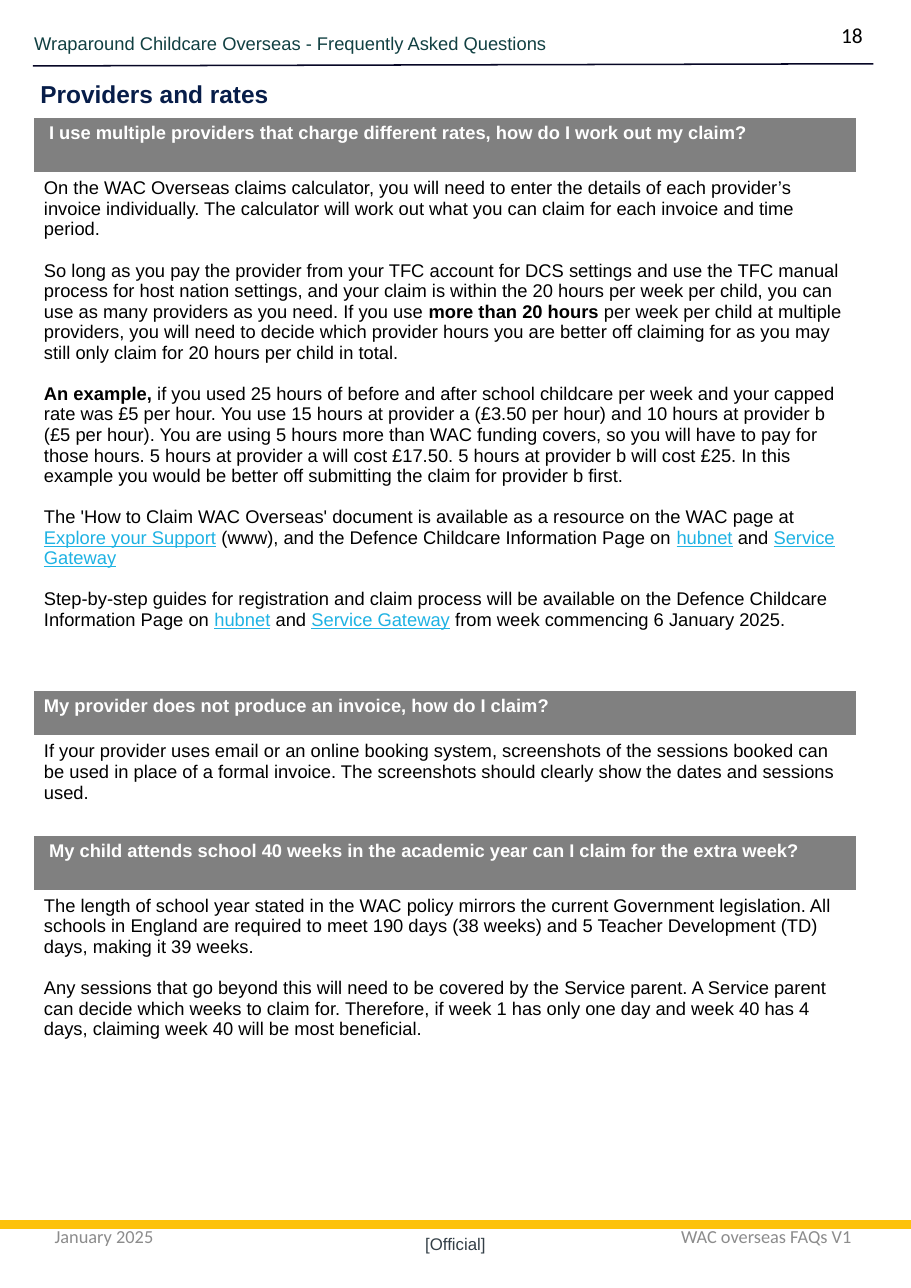
import pptx
import pptx.dml.color
import pptx.enum.shapes
import pptx.enum.text
import pptx.oxml
import pptx.oxml.ns
import pptx.util

Cm = pptx.util.Cm
Pt = pptx.util.Pt
Color = pptx.dml.color.RGBColor
Align = pptx.enum.text.PP_ALIGN
Anchor = pptx.enum.text.MSO_ANCHOR

BLACK = Color(0x00, 0x00, 0x00)
WHITE = Color(0xFF, 0xFF, 0xFF)
BAND_GREY = Color(0x80, 0x80, 0x80)
FOOTER_GREY = Color(0x8C, 0x8C, 0x8C)
MARKING_GREY = Color(0x33, 0x3F, 0x47)
HEADER_GREEN = Color(0x11, 0x40, 0x42)
RULE_NAVY = Color(0x06, 0x06, 0x25)
TITLE_NAVY = Color(0x07, 0x1D, 0x49)
RULE_YELLOW = Color(0xFD, 0xC2, 0x0B)
LINK_BLUE = Color(0x1E, 0xB2, 0xE3)

PAGE_WIDTH = 21.01
PLAIN, BOLD, LINK = "plain", "bold", "link"
INTRANET = (LINK, "hubnet")
GATEWAY = (LINK, "Service Gateway")
AND = (PLAIN, " and ")

QUESTIONS = [
    ("\u00a0I use multiple providers that charge different rates, how do I work out my claim?", 1.27, 11.94, [
        [(PLAIN, "On the WAC Overseas claims calculator, you will need to enter the details of each provider’s "
                 "invoice individually. The calculator will work out what you can claim for each invoice and "
                 "time period.")],
        [(PLAIN, "So long as you pay the provider from your TFC account for DCS settings and use the TFC manual "
                 "process for host nation settings, and your claim is within the 20 hours per week per child, "
                 "you can use as many providers as you need. If you use "),
         (BOLD, "more than 20 hours"),
         (PLAIN, " per week per child at multiple providers, you will need to decide which provider hours you "
                 "are better off claiming for as you may still only claim for 20 hours per child in total.")],
        [(BOLD, "An example, "),
         (PLAIN, "if you used 25 hours of before and after school childcare per week and your capped rate was "
                 "£5 per hour. You use 15 hours at provider a (£3.50 per hour) and 10 hours at provider b "
                 "(£5 per hour). You are using 5 hours more than WAC funding covers, so you will have to pay "
                 "for those hours. 5 hours at provider a will cost £17.50. 5 hours at provider b will cost "
                 "£25. In this example you would be better off submitting the claim for provider b first.")],
        [(PLAIN, "The 'How to Claim WAC Overseas' document is available as a resource on the WAC page at "),
         (LINK, "Explore your Support"),
         (PLAIN, " (www), and the Defence Childcare Information Page on "),
         INTRANET, AND, GATEWAY],
        [(PLAIN, "Step-by-step guides for registration and\u00a0claim process will be available on the Defence "
                 "Childcare Information Page on "),
         INTRANET, AND, GATEWAY,
         (PLAIN, " from week commencing 6 January 2025.")],
    ]),
    ("My provider does not produce an invoice, how do I claim?", 1.04, 2.29, [
        [(PLAIN, "If your provider uses email or an online booking system, screenshots of the sessions booked "
                 "can be used in place of a formal invoice. The screenshots should clearly show the dates and "
                 "sessions used.")],
    ]),
    ("\u00a0My child attends school 40 weeks in the academic year can I claim for the extra week?", 1.27, 3.81, [
        [(PLAIN, "The length of school year stated in the WAC policy mirrors the current Government "
                 "legislation. All schools in England are required to meet 190 days (38 weeks) and 5 Teacher "
                 "Development (TD) days, making it 39 weeks.")],
        [(PLAIN, "Any sessions that go beyond this will need to be covered by the Service parent. A Service "
                 "parent can decide which weeks to claim for. Therefore, if week 1 has only one day and week "
                 "40 has 4 days, claiming week 40 will be most beneficial.")],
    ]),
]


class FaqPage:
    font = "Arial"
    size = 12

    def __init__(self, deck):
        self.slide = deck.slides.add_slide(deck.slide_layouts[5])

    def style(self, span, color, size=None, font=None, bold=False):
        span.font.name = font or self.font
        span.font.size = Pt(size or self.size)
        span.font.bold = bold
        span.font.color.rgb = color

    def fill_frame(self, frame, words, color, size=None, font=None, bold=False,
                   align=Align.LEFT, anchor=Anchor.TOP):
        frame.word_wrap = True
        frame.auto_size = pptx.enum.text.MSO_AUTO_SIZE.NONE
        frame.vertical_anchor = anchor
        frame.text = words
        para = frame.paragraphs[0]
        para.alignment = align
        self.style(para.runs[0], color, size, font, bold)

    def title(self, words, left, top, width, height):
        box = self.slide.shapes.title
        box.left, box.top, box.width, box.height = Cm(left), Cm(top), Cm(width), Cm(height)
        self.fill_frame(box.text_frame, words, TITLE_NAVY, 16, bold=True)

    def text(self, words, left, top, width, height, color, inset=True, **look):
        box = self.slide.shapes.add_textbox(Cm(left), Cm(top), Cm(width), Cm(height))
        frame = box.text_frame
        if not inset:
            frame.margin_left = frame.margin_right = frame.margin_top = frame.margin_bottom = 0
        self.fill_frame(frame, words, color, **look)

    def rule(self, left, top, right, bottom, color, weight):
        line = self.slide.shapes.add_connector(
            pptx.enum.shapes.MSO_CONNECTOR.STRAIGHT, Cm(left), Cm(top), Cm(right), Cm(bottom))
        line.line.color.rgb = color
        line.line.width = Pt(weight)
        properties = line._element.spPr
        properties.append(pptx.oxml.parse_xml("<a:effectLst %s/>" % pptx.oxml.ns.nsdecls("a")))

    def paint(self, cell, color):
        cell.fill.solid()
        cell.fill.fore_color.rgb = color

    def answer(self, cell, paragraphs):
        self.paint(cell, WHITE)
        frame = cell.text_frame
        for index, pieces in enumerate(paragraphs):
            para = frame.add_paragraph() if index else frame.paragraphs[0]
            para.space_before = Pt(13.4 if index else 0)
            for kind, words in pieces:
                span = para.add_run()
                span.text = words
                self.style(span, LINK_BLUE if kind == LINK else BLACK, bold=kind == BOLD)
                span.font.underline = kind == LINK

    def question_table(self, questions, left, top, width):
        heights = [height for entry in questions for height in entry[1:3]]
        table = self.slide.shapes.add_table(
            len(heights), 1, Cm(left), Cm(top), Cm(width), Cm(sum(heights))).table
        table.first_row = table.horz_banding = False
        for row, height in zip(table.rows, heights):
            row.height = Cm(height)
        for index, (question, _, _, paragraphs) in enumerate(questions):
            heading = table.cell(2 * index, 0)
            self.paint(heading, BAND_GREY)
            heading.text_frame.text = question
            self.style(heading.text_frame.paragraphs[0].runs[0], WHITE, bold=True)
            self.answer(table.cell(2 * index + 1, 0), paragraphs)


def main():
    deck = pptx.Presentation()
    deck.slide_width = Cm(PAGE_WIDTH)
    deck.slide_height = Cm(29.69)
    page = FaqPage(deck)
    page.text("Wraparound Childcare Overseas -\u00a0Frequently Asked Questions",
              0.79, 0.74, 14.35, 1.02, HEADER_GREEN, inset=False)
    page.rule(0.76, 1.52, 20.14, 1.47, RULE_NAVY, 1)
    page.question_table(QUESTIONS, 0.76, 2.71, 19)
    page.title("Providers and rates", 0.68, 1.7, 13.69, 0.94)
    footer = dict(color=FOOTER_GREY, font="Calibri", anchor=Anchor.MIDDLE)
    page.text("January 2025", 1.01, 27.72, 4.9, 1.57, **footer)
    page.text("WAC overseas FAQs V1", 14.35, 27.7, 6.65, 1.57, align=Align.CENTER, **footer)
    page.rule(0, 28.22, PAGE_WIDTH, 28.22, RULE_YELLOW, 6)
    page.text("[Official]", 0, 28.43, PAGE_WIDTH, 0.48, MARKING_GREY, inset=False,
              size=11, align=Align.CENTER, anchor=Anchor.BOTTOM)
    page.text("18", 18.47, 0.38, 1.68, 0.86, BLACK, size=14, font="Calibri", align=Align.RIGHT)
    deck.save("out.pptx")


if __name__ == "__main__":
    main()
